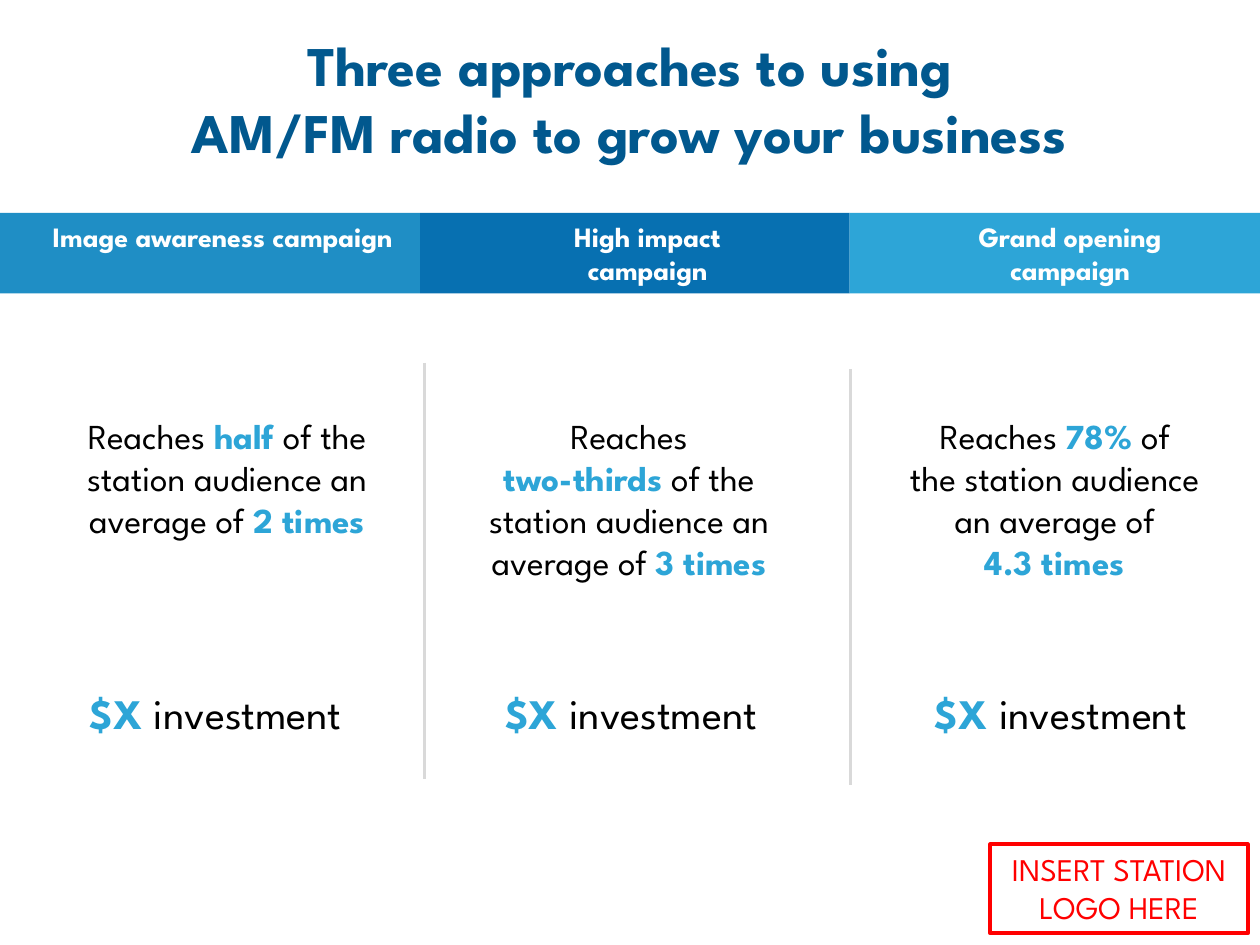
from lxml import etree
from pptx import Presentation
from pptx.dml.color import RGBColor
from pptx.enum.shapes import MSO_CONNECTOR, MSO_SHAPE
from pptx.enum.text import MSO_ANCHOR, MSO_AUTO_SIZE, PP_ALIGN
from pptx.oxml.ns import qn
from pptx.util import Pt

RECTANGLE = MSO_SHAPE.RECTANGLE
STRAIGHT = MSO_CONNECTOR.STRAIGHT
TOP = MSO_ANCHOR.TOP
CENTER = PP_ALIGN.CENTER
GROW = MSO_AUTO_SIZE.SHAPE_TO_FIT_TEXT

FONT = "League Spartan"
NAVY, SKY, BLACK, WHITE, RED, GRAY = "01588E", "2DA5D7", "000000", "FFFFFF", "FF0000", "D9D9D9"
TITLE = "Three approaches to using\vAM/FM radio to grow your business"

CAMPAIGNS = [
    {"header": "Image awareness campaign", "fill": "1F8EC5", "header_span": (0, 240),
     "reach": ["Reaches *half* of the station audience an average of *2 times*"],
     "reach_span": (39, 181.5), "investment_left": 32.5},
    {"header": "High impact\vcampaign", "fill": "0770B1", "header_span": (240, 245.5),
     "reach": ["Reaches\v*two-thirds* of the station audience an average of *3 times*"],
     "reach_span": (257, 205), "investment_left": 270},
    {"header": "Grand opening\vcampaign", "fill": SKY, "header_span": (485.5, 237.5),
     "reach": ["Reaches *78%* of\vthe station audience an average of", "*4.3 times*"],
     "reach_span": (504, 197.5), "investment_left": 515.5},
]
DIVIDERS = [(242.6, 207.4), (486, 211)]


def color(hex_code):
    """Turn a hex string into a colour."""
    return RGBColor.from_string(hex_code)


def points(box):
    """Turn a box of left, top, width and height into lengths."""
    return [Pt(value) for value in box]


def format_span(span, size, hex_code, bold):
    """Set the font of one run."""
    span.font.name = FONT
    span.font.size = Pt(size)
    span.font.bold = bold
    span.font.color.rgb = color(hex_code)


def prepare_frame(frame, insets=(7.2, 3.6, 7.2, 3.6)):
    """Make a text frame wrap, start at the top and fit its text."""
    frame.word_wrap = True
    frame.auto_size = GROW
    frame.vertical_anchor = TOP
    (frame.margin_left, frame.margin_top,
     frame.margin_right, frame.margin_bottom) = points(insets)


def set_plain_text(frame, text, size, hex_code, bold):
    """Fill a frame with centred text in a single style."""
    frame.text = text
    for para in frame.paragraphs:
        para.alignment = CENTER
        for span in para.runs:
            format_span(span, size, hex_code, bold)


def add_marked_text(page, box, lines, size):
    """Add a text box where words between asterisks are highlighted."""
    frame = page.shapes.add_textbox(*points(box)).text_frame
    prepare_frame(frame)
    for index, line in enumerate(lines):
        para = frame.add_paragraph() if index else frame.paragraphs[0]
        para.alignment = CENTER
        for position, piece in enumerate(line.split("*")):
            marked = position % 2 == 1
            for row, text in enumerate(piece.split("\v")):
                if row:
                    para.add_line_break()
                if text:
                    span = para.add_run()
                    span.text = text
                    format_span(span, size, SKY if marked else BLACK, marked)


def add_title(page, box):
    """Place the slide title."""
    title = page.shapes.title
    title.left, title.top, title.width, title.height = points(box)
    prepare_frame(title.text_frame)
    set_plain_text(title.text_frame, TITLE, 32, NAVY, True)


def add_header(page, box, text, fill):
    """Add the coloured heading of a campaign."""
    header = page.shapes.add_shape(RECTANGLE, *points(box))
    header.shadow.inherit = False
    header.fill.solid()
    header.fill.fore_color.rgb = color(fill)
    header.line.fill.background()
    prepare_frame(header.text_frame, (21.6, 3.6, 7.2, 3.6))
    set_plain_text(header.text_frame, text, 16, WHITE, True)


def add_campaign(page, campaign):
    """Add the heading, reach and investment of one campaign."""
    left, width = campaign["header_span"]
    add_header(page, (left, 121.7, width, 46), campaign["header"], campaign["fill"])
    left, width = campaign["reach_span"]
    add_marked_text(page, (left, 233.3, width, 128), campaign["reach"], 20)
    investment_box = (campaign["investment_left"], 389.5, 181.5, 36)
    add_marked_text(page, investment_box, ["*$X *investment"], 24)


def add_divider(page, left, top, height):
    """Add a vertical line between two campaigns."""
    divider = page.shapes.add_connector(STRAIGHT, *points((left, top, left, top + height)))
    divider.line.color.rgb = color(GRAY)
    divider.line.width = Pt(2)
    properties = divider._element.spPr
    etree.SubElement(properties, qn("a:effectLst"))


def add_station_box(page, box):
    """Add the outlined space for the station logo."""
    station = page.shapes.add_shape(RECTANGLE, *points(box))
    station.shadow.inherit = False
    station.fill.background()
    station.line.color.rgb = color(RED)
    station.line.width = Pt(2.25)
    prepare_frame(station.text_frame, (3.6, 3.6, 3.6, 3.6))
    set_plain_text(station.text_frame, "INSERT STATION LOGO HERE", 18, RED, False)


def main():
    """Build and save the deck."""
    deck = Presentation()
    deck.slide_width, deck.slide_height = Pt(720), Pt(540)
    page = deck.slides.add_slide(deck.slide_layouts[5])
    add_title(page, (42, 13.7, 636, 85))
    for campaign in CAMPAIGNS:
        add_campaign(page, campaign)
    for left, top in DIVIDERS:
        add_divider(page, left, top, 237.6)
    add_station_box(page, (566, 482.4, 147, 51))
    deck.save("out.pptx")


if __name__ == "__main__":
    main()
